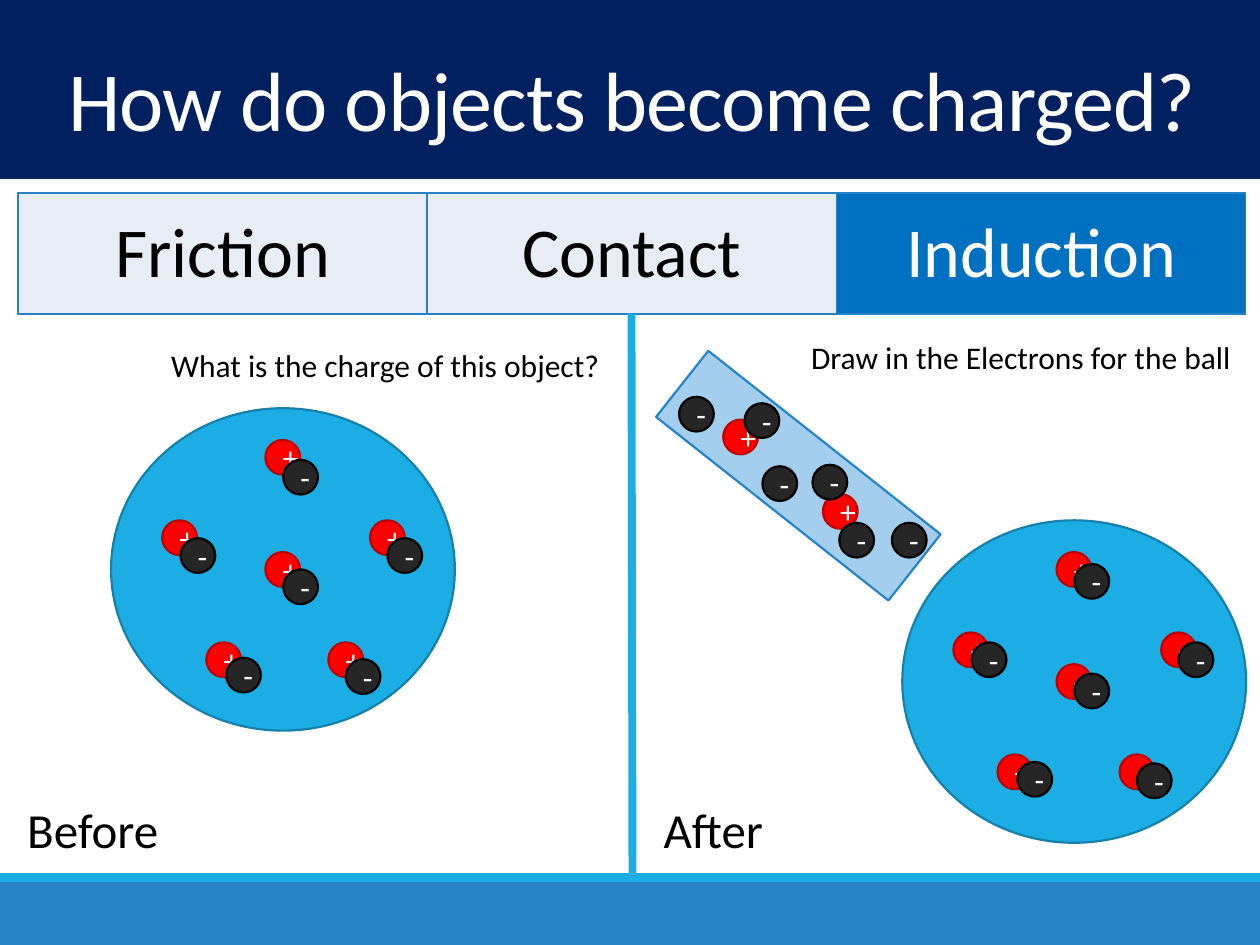
"""Build a slide on charging by induction, with a before and an after drawing."""
from lxml.etree import SubElement
from pptx import Presentation
from pptx.dml.color import RGBColor
from pptx.enum.shapes import MSO_CONNECTOR, MSO_SHAPE
from pptx.enum.text import MSO_ANCHOR, MSO_AUTO_SIZE, PP_ALIGN
from pptx.oxml.ns import qn
from pptx.util import Cm, Pt

COLORS = {
    "navy": "002060", "blue": "2683C6", "sky": "1CADE4", "sky_edge": "1580A9",
    "rod": "A3CEED", "tab": "E8EDF5", "active_tab": "0070C0",
    "proton": "FF0000", "proton_edge": "C00000", "electron": "262626",
    "black": "000000", "white": "FFFFFF",
}


def write(frame, text, size=18, color="black", align=PP_ALIGN.LEFT, anchor=None):
    para = frame.paragraphs[0]
    para.alignment = align
    if anchor is not None:
        frame.vertical_anchor = anchor
    span = para.add_run()
    span.text = text
    span.font.name = "Calibri"
    span.font.size = Pt(size)
    span.font.color.rgb = RGBColor.from_string(COLORS[color])
    return span


def draw(kind, left, top, width, height, fill, edge=None):
    shape = page.shapes.add_shape(kind, Cm(left), Cm(top), Cm(width), Cm(height))
    shape.shadow.inherit = False
    shape.fill.solid()
    shape.fill.fore_color.rgb = RGBColor.from_string(COLORS[fill])
    if edge:
        shape.line.color.rgb = RGBColor.from_string(COLORS[edge])
        shape.line.width = Pt(1.25)
    else:
        shape.line.fill.background()
    return shape


deck = Presentation()
deck.slide_width, deck.slide_height = Cm(25.4), Cm(19.05)
page = deck.slides.add_slide(deck.slide_layouts[5])

draw(MSO_SHAPE.RECTANGLE, 0, 17.78, 25.4, 1.27, "blue")
draw(MSO_SHAPE.RECTANGLE, 0, 17.6, 25.4, 0.18, "sky")
header = draw(MSO_SHAPE.RECTANGLE, 0, 0, 25.4, 3.61, "navy")

title = page.shapes.title
header.element.addnext(title.element)
title.left, title.top, title.width, title.height = Cm(0.08), Cm(1.07), Cm(25.32), Cm(2.13)
title.text_frame.auto_size = MSO_AUTO_SIZE.NONE
heading = write(title.text_frame, "How do objects become charged?", size=48, color="white",
                align=PP_ALIGN.CENTER, anchor=MSO_ANCHOR.MIDDLE)
heading.font._element.set("spc", "-50")
title.text_frame.paragraphs[0].line_spacing = 0.85

tabs = page.shapes.add_table(1, 3, Cm(0.36), Cm(3.89), Cm(24.75), Cm(2.44)).table
methods = [("Friction", "tab", "black"), ("Contact", "tab", "black"),
           ("Induction", "active_tab", "white")]
for column, (method, fill, color) in enumerate(methods):
    tabs.columns[column].width = Cm(8.25)
    cell = tabs.cell(0, column)
    write(cell.text_frame, method, size=40, color=color, align=PP_ALIGN.CENTER)
    cell.vertical_anchor = MSO_ANCHOR.MIDDLE
    properties = cell._tc.get_or_add_tcPr()
    for side in ("a:lnL", "a:lnR", "a:lnT", "a:lnB"):
        border = SubElement(properties, qn(side), w=str(Pt(1)))
        solid = SubElement(border, qn("a:solidFill"))
        SubElement(solid, qn("a:srgbClr"), val=COLORS["blue"])
    cell.fill.solid()
    cell.fill.fore_color.rgb = RGBColor.from_string(COLORS[fill])

divider = page.shapes.add_connector(MSO_CONNECTOR.STRAIGHT, Cm(12.73), Cm(6.32), Cm(12.75), Cm(17.65))
divider.line.color.rgb = RGBColor.from_string(COLORS["sky"])
divider.line.width = Pt(4.5)
SubElement(divider.element.spPr, qn("a:effectLst"))

labels = [
    ("Before", 0.3, 16, 3.15, 1.45, 28),
    ("After", 13.13, 16, 2.54, 1.45, 28),
    ("What is the charge of this object?", 3.2, 6.86, 9.17, 1.02, 18),
    ("Draw in the Electrons for the ball", 16.1, 6.68, 8.97, 1.02, 18),
]
for text, left, top, width, height, size in labels:
    box = page.shapes.add_textbox(Cm(left), Cm(top), Cm(width), Cm(height))
    box.text_frame.word_wrap = False
    box.text_frame.auto_size = MSO_AUTO_SIZE.SHAPE_TO_FIT_TEXT
    write(box.text_frame, text, size=size)

rod = draw(MSO_SHAPE.RECTANGLE, 13.11, 8.74, 5.97, 1.7, "rod", "blue")
rod.rotation = 38.3
protons = [(14.58, 8.46), (16.59, 9.96)]
electrons = [(13.69, 8), (15.01, 8.13), (15.37, 9.4), (16.38, 9.37), (16.92, 10.54), (17.98, 10.54)]

ball_protons = [(3.11, 0.64), (4.38, 4.72), (1.92, 4.72), (3.11, 2.9), (5.22, 2.26), (1.03, 2.26)]
ball_electrons = [(3.47, 1.04), (4.73, 5.06), (2.32, 5.03), (3.47, 3.25), (5.57, 2.62), (1.4, 2.62)]
for left, top, electron_lift in [(2.24, 8.23, 0), (18.19, 10.49, 0.16)]:
    draw(MSO_SHAPE.OVAL, left, top, 6.93, 6.5, "sky", "sky_edge")
    protons += [(left + x, top + y) for x, y in ball_protons]
    electrons += [(left + x, top + y - electron_lift) for x, y in ball_electrons]

for places, sign, fill, edge in [(protons, "+", "proton", "proton_edge"),
                                 (electrons, "-", "electron", "black")]:
    for left, top in places:
        particle = draw(MSO_SHAPE.OVAL, left, top, 0.7, 0.7, fill, edge)
        write(particle.text_frame, sign, color="white", align=PP_ALIGN.CENTER,
              anchor=MSO_ANCHOR.MIDDLE)

deck.save("out.pptx")
